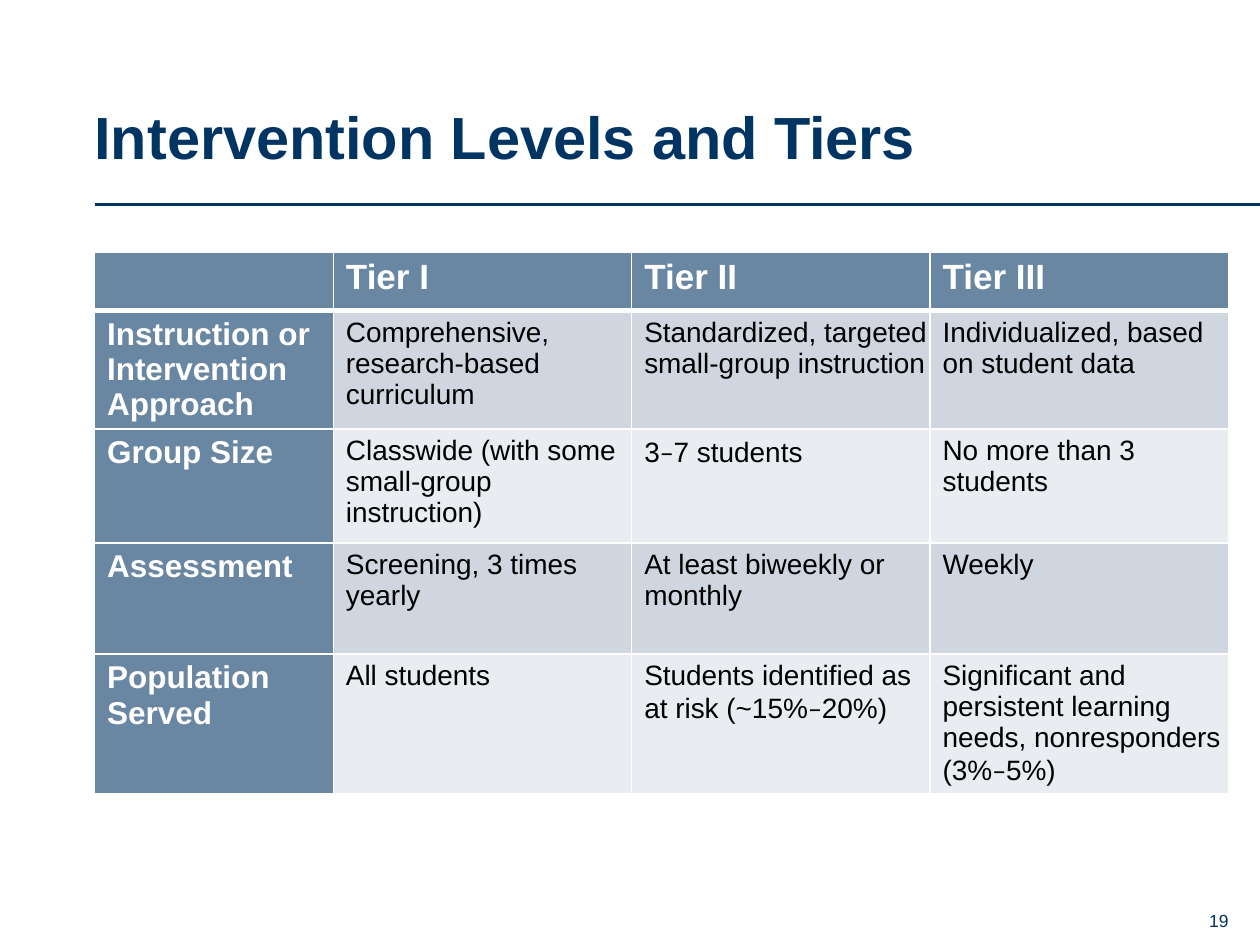
from lxml import etree
from pptx import Presentation
from pptx.dml.color import RGBColor
from pptx.enum import shapes, text
from pptx.oxml.ns import qn
from pptx.util import Pt

NAVY = RGBColor(0x00, 0x34, 0x62)
STEEL = RGBColor(0x69, 0x86, 0xA3)
BAND_DARK = RGBColor(0xD0, 0xD6, 0xDF)
BAND_LIGHT = RGBColor(0xE9, 0xEC, 0xF0)
WHITE = RGBColor(0xFF, 0xFF, 0xFF)
BLACK = RGBColor(0x00, 0x00, 0x00)

LEFT, WIDTH = 54, 648
COL_WIDTHS = [136.5, 170.5, 170.5, 170.5]
ROW_HEIGHTS = [33.5, 67, 65, 63.5, 80]
ROWS = [
    ["", "Tier I", "Tier II", "Tier III"],
    ["Instruction or\nIntervention Approach",
     "Comprehensive, research-based curriculum",
     "Standardized, targeted small-group instruction",
     "Individualized, based on student data"],
    ["Group Size", "Classwide (with some small-group instruction)",
     "3–7 students", "No more than 3 students"],
    ["Assessment", "Screening, 3 times yearly",
     "At least biweekly or monthly", "Weekly"],
    ["Population Served", "All students",
     "Students identified as at risk (~15%–20%)",
     "Significant and persistent learning needs, nonresponders (3%–5%)"],
]


def add_run(p, words, size, color, bold=False, font="Arial"):
    r = p.add_run()
    r.text = words
    r.font.name, r.font.size, r.font.bold = font, Pt(size), bold
    r.font.color.rgb = color


def clear_margins(tf):
    tf.margin_left = tf.margin_right = tf.margin_top = tf.margin_bottom = 0


def add_title(s, words):
    sp = s.shapes.title
    sp.left, sp.top, sp.width, sp.height = Pt(LEFT), Pt(17), Pt(WIDTH), Pt(81.5)
    tf = sp.text_frame
    clear_margins(tf)
    tf.word_wrap = True
    tf.auto_size = text.MSO_AUTO_SIZE.NONE
    tf.vertical_anchor = text.MSO_ANCHOR.BOTTOM
    p = tf.paragraphs[0]
    p.alignment = text.PP_ALIGN.LEFT
    p.line_spacing = 0.9
    add_run(p, words, 34, NAVY, True)


def add_rule(s, y):
    ln = s.shapes.add_connector(shapes.MSO_CONNECTOR.STRAIGHT,
                                Pt(LEFT), Pt(y), Pt(720), Pt(y))
    ln.line.color.rgb = NAVY
    ln.line.width = Pt(1.5)
    etree.SubElement(ln._element.spPr, qn("a:effectLst"))


def set_borders(cell, widths):
    """Draw white cell edges; widths maps each edge tag to points."""
    tc_pr = cell._tc.get_or_add_tcPr()
    for edge, width in widths.items():
        ln = etree.SubElement(tc_pr, qn(f"a:{edge}"), w=str(Pt(width)))
        fill = etree.SubElement(ln, qn("a:solidFill"))
        etree.SubElement(fill, qn("a:srgbClr"), val=str(WHITE))


def fill_cell(cell, words, row, col):
    header, label = row == 0, col == 0
    heading = header or label
    set_borders(cell, {"lnL": 1, "lnR": 1, "lnT": 3 if row == 1 else 1,
                       "lnB": 3 if header else 1})
    cell.fill.solid()
    band = BAND_DARK if row % 2 else BAND_LIGHT
    cell.fill.fore_color.rgb = STEEL if heading else band
    cell.margin_left = Pt(7.2)
    cell.margin_right = Pt(7.2 if heading else 0)
    cell.margin_top = cell.margin_bottom = Pt(3.6)
    size = 20 if header else 18 if label else 16
    color = WHITE if heading else BLACK
    tf = cell.text_frame
    for i, line in enumerate(words.split("\n") if words else []):
        p = tf.add_paragraph() if i else tf.paragraphs[0]
        # En dashes are set in their own font
        for j, part in enumerate(line.split("–")):
            if j:
                add_run(p, "–", size, color, heading, "Calibri")
            add_run(p, part, size, color, heading)


def add_tier_table(s):
    table = s.shapes.add_table(len(ROWS), len(COL_WIDTHS), Pt(LEFT), Pt(144),
                               Pt(WIDTH), Pt(sum(ROW_HEIGHTS))).table
    for column, width in zip(table.columns, COL_WIDTHS):
        column.width = Pt(width)
    for row, height in zip(table.rows, ROW_HEIGHTS):
        row.height = Pt(height)
    for i, row in enumerate(ROWS):
        for j, words in enumerate(row):
            fill_cell(table.cell(i, j), words, i, j)


def add_page_number(s, number):
    tf = s.shapes.add_textbox(Pt(690), Pt(520), Pt(12), Pt(12)).text_frame
    clear_margins(tf)
    tf.word_wrap = False
    tf.vertical_anchor = text.MSO_ANCHOR.MIDDLE
    p = tf.paragraphs[0]
    p.alignment = text.PP_ALIGN.RIGHT
    add_run(p, number, 10, NAVY)


def main():
    prs = Presentation()
    prs.slide_width, prs.slide_height = Pt(720), Pt(540)
    s = prs.slides.add_slide(prs.slide_layouts[5])
    # Heading
    add_rule(s, 117)
    add_title(s, "Intervention Levels and Tiers")
    # Tier comparison
    add_tier_table(s)
    # Footer
    add_page_number(s, "19")
    prs.save("out.pptx")


if __name__ == "__main__":
    main()
